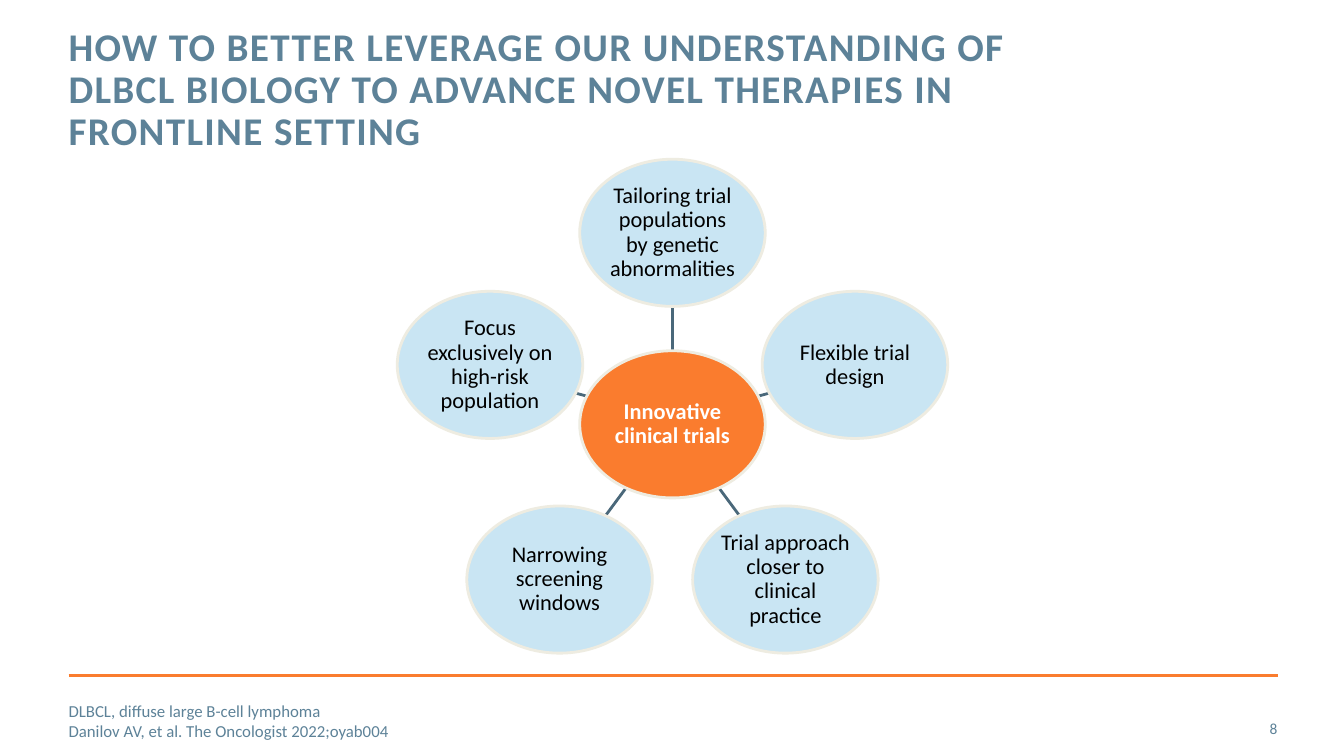
import math
import pptx
import pptx.util
import pptx.dml.color
import pptx.enum.shapes
import pptx.enum.text
import pptx.oxml.ns

PX = 9144  # EMU; 100 px to the inch
ORANGE, SLATE, SKY = "FA7C2E", "5D8298", "C9E5F3"
ALIGN = pptx.enum.text.PP_ALIGN
ANCHOR = pptx.enum.text.MSO_ANCHOR


def paint(color, code):
    """Set a fill, line or font colour from a hex string."""
    if hasattr(color, "solid"):
        color.solid()
        color = color.fore_color
    color.rgb = pptx.dml.color.RGBColor.from_string(code)


def write(shape, text, size, code, align, anchor, inset=0, bold=False):
    """Fill a shape with one paragraph and return the paragraph."""
    frame = shape.text_frame
    frame.word_wrap = True
    frame.vertical_anchor = anchor
    frame.margin_left = frame.margin_right = inset * PX
    frame.margin_top = frame.margin_bottom = inset * PX
    para = frame.paragraphs[0]
    para.text = text
    para.alignment = align
    para.font.name = "Calibri"
    para.font.size = pptx.util.Pt(size)
    para.font.bold = bold
    paint(para.font.color, code)
    return para


deck = pptx.Presentation()
deck.slide_width, deck.slide_height = 1333 * PX, 750 * PX
slide = deck.slides.add_slide(deck.slide_layouts[6])
shapes = slide.shapes

# Hub and spokes: five ideas spaced evenly around the centre
CX, CY, REACH = 667, 421, 190
WIDE, HIGH = 184, 146
ideas = [
    "Tailoring trial populations by genetic abnormalities",
    "Flexible trial design",
    "Trial approach closer to clinical practice",
    "Narrowing screening windows",
    "Focus exclusively on high-risk population",
]
nodes = [("Innovative clinical trials", CX, CY, ORANGE, "FFFFFF", True)]
lines = [(68, 670, 1268, 670, ORANGE)]
for i, idea in enumerate(ideas):
    turn = math.radians(360 / len(ideas) * i - 90)
    cos, sin = math.cos(turn), math.sin(turn)
    edge = 1 / math.hypot(cos / (WIDE / 2), sin / (HIGH / 2))
    far = REACH - edge
    lines.append((CX + edge * cos, CY + edge * sin,
                  CX + far * cos, CY + far * sin, "4A687A"))
    nodes.append((idea, CX + REACH * cos, CY + REACH * sin, SKY, "000000", False))

for *ends, code in lines:
    line = shapes.add_connector(pptx.enum.shapes.MSO_CONNECTOR.STRAIGHT,
                                *[round(end) * PX for end in ends])
    paint(line.line.color, code)
    line.line.width = pptx.util.Pt(2)
    props = line._element.spPr
    props.append(props.makeelement(pptx.oxml.ns.qn("a:effectLst"), {}))

for text, x, y, fill, ink, bold in nodes:
    node = shapes.add_shape(pptx.enum.shapes.MSO_SHAPE.OVAL,
                            round(x - WIDE / 2) * PX, round(y - HIGH / 2) * PX,
                            WIDE * PX, HIGH * PX)
    node.shadow.inherit = False
    paint(node.fill, fill)
    paint(node.line.color, "EEECE1")
    node.line.width = pptx.util.Pt(2)
    para = write(node, text, 16, ink, ALIGN.CENTER, ANCHOR.MIDDLE, 1, bold)
    para.line_spacing = 0.9

title = shapes.add_textbox(68 * PX, 27 * PX, 944 * PX, 129 * PX)
para = write(title, "HOW TO BETTER LEVERAGE OUR UNDERSTANDING OF DLBCL BIOLOGY "
             "TO ADVANCE NOVEL THERAPIES IN FRONTLINE SETTING",
             28, SLATE, ALIGN.LEFT, ANCHOR.TOP, bold=True)
para.line_spacing = pptx.util.Pt(30)
para.runs[0].font._element.set("spc", "100")

page = shapes.add_textbox(1181 * PX, 703 * PX, 86 * PX, 40 * PX)
write(page, "8", 11, SLATE, ALIGN.RIGHT, ANCHOR.MIDDLE)

note = shapes.add_textbox(68 * PX, 695 * PX, 888 * PX, 40 * PX)
write(note, "DLBCL, diffuse large B-cell lymphoma\v"
      "Danilov AV, et al. The Oncologist 2022;oyab004",
      12, SLATE, ALIGN.LEFT, ANCHOR.MIDDLE)

deck.save("out.pptx")
